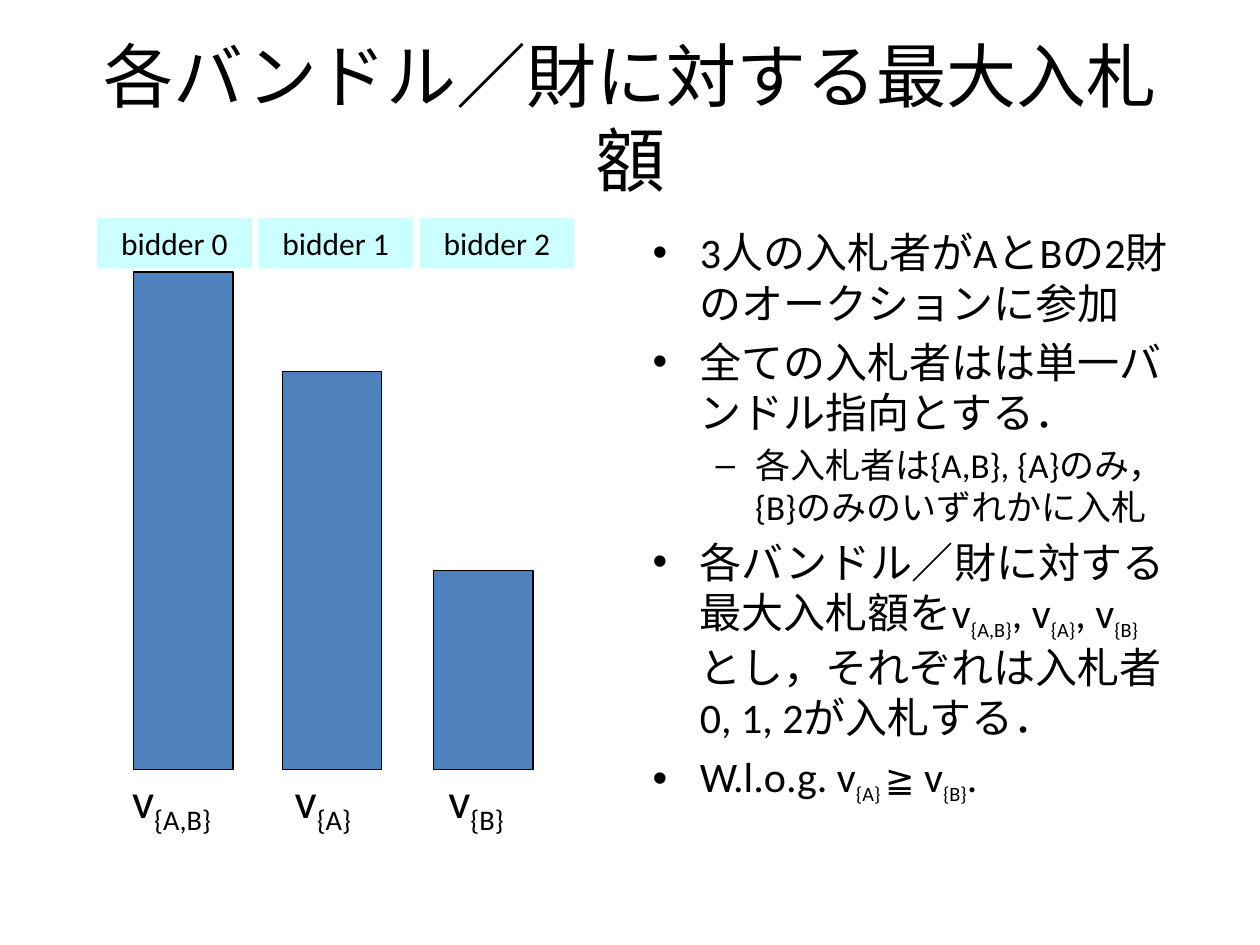
import pptx
from pptx.dml.color import RGBColor
from pptx.enum.shapes import MSO_SHAPE
from pptx.enum.text import MSO_ANCHOR, MSO_AUTO_SIZE, PP_ALIGN
from pptx.util import Inches, Pt

TITLE = "各バンドル／財に対する最大入札額"

# Each bullet: level, then spans of (text, size, is subscript)
BULLETS = [
    (0, [("3人の入札者がAとBの2財のオークションに参加", 24, False)]),
    (0, [("全ての入札者はは単一バンドル指向とする．", 24, False)]),
    (1, [("各入札者は{A,B}, {A}のみ，{B}のみのいずれかに入札", 20, False)]),
    (0, [("各バンドル／財に対する最大入札額をv", 24, False), ("{A,B}", 20, True),
         (", v", 24, False), ("{A}", 20, True),
         (", v", 24, False), ("{B}", 20, True),
         (" とし，それぞれは入札者0, 1, 2が入札する．", 24, False)]),
    (0, [("W.l.o.g. v", 24, False), ("{A} ", 20, True), ("≧", 20, False),
         (" v", 24, False), ("{B}", 20, True), (".", 24, False)]),
]

# Bidder, bundle, bid in units, bar left, label left, label width
BIDS = [
    ("bidder 0", "{A,B}", 5, 1.06, 0.95, 1.0),
    ("bidder 1", "{A}", 4, 2.24, 2.24, 0.75),
    ("bidder 2", "{B}", 2, 3.44, 3.46, 0.75),
]
BAR_WIDTH, BAR_BOTTOM, UNIT = 0.79, 6.11, 0.79
TAG_LEFT, TAG_TOP, TAG_WIDTH, TAG_HEIGHT, TAG_STEP = 0.77, 1.73, 1.23, 0.4, 1.28
LABEL_TOP, LABEL_HEIGHT = 6.06, 0.57


def color(value):
    return RGBColor.from_string(value)


def format_span(span, size):
    span.font.name = "Calibri"
    span.font.size = Pt(size)
    span.font.color.rgb = color("000000")


def add_spans(para, spans):
    for text, size, subscript in spans:
        span = para.add_run()
        span.text = text
        format_span(span, size)
        if subscript:
            span.font._element.set("baseline", "-25000")


def place(shape, left, top, width, height):
    shape.left, shape.top = Inches(left), Inches(top)
    shape.width, shape.height = Inches(width), Inches(height)


def add_rectangle(slide, left, top, width, height, fill):
    box = slide.shapes.add_shape(MSO_SHAPE.RECTANGLE, Inches(left), Inches(top),
                                 Inches(width), Inches(height))
    box.shadow.inherit = False
    box.fill.solid()
    box.fill.fore_color.rgb = color(fill)
    return box


def add_bid(slide, index, bidder, bundle, units, bar_left, label_left, label_width):
    """Draw one bidder's bar with its name above and its value below."""
    height = units * UNIT
    bar = add_rectangle(slide, bar_left, BAR_BOTTOM - height, BAR_WIDTH, height, "4F81BD")
    bar.line.color.rgb = color("000000")
    bar.line.width = Pt(0.75)

    tag = add_rectangle(slide, TAG_LEFT + index * TAG_STEP, TAG_TOP,
                        TAG_WIDTH, TAG_HEIGHT, "CCFFFF")
    tag.line.fill.background()
    tag.text_frame.text = bidder
    tag.text_frame.vertical_anchor = MSO_ANCHOR.MIDDLE
    para = tag.text_frame.paragraphs[0]
    para.alignment = PP_ALIGN.CENTER
    format_span(para.runs[0], 18)

    label = slide.shapes.add_textbox(Inches(label_left), Inches(LABEL_TOP),
                                     Inches(label_width), Inches(LABEL_HEIGHT))
    label.text_frame.word_wrap = False
    add_spans(label.text_frame.paragraphs[0], [("v", 28, False), (bundle, 28, True)])


def main():
    deck = pptx.Presentation()
    deck.slide_width, deck.slide_height = Inches(10), Inches(7.5)
    slide = deck.slides.add_slide(deck.slide_layouts[1])

    title, body = slide.shapes.title, slide.placeholders[1]
    place(title, 0.5, 0.3, 9, 1.25)
    title.text_frame.text = TITLE
    title.text_frame.auto_size = MSO_AUTO_SIZE.NONE
    format_span(title.text_frame.paragraphs[0].runs[0], 40)

    place(body, 5.08, 1.75, 4.42, 4.95)
    frame = body.text_frame
    frame.auto_size = MSO_AUTO_SIZE.NONE
    for index, (level, spans) in enumerate(BULLETS):
        para = frame.add_paragraph() if index else frame.paragraphs[0]
        para.level = level
        add_spans(para, spans)

    for index, bid in enumerate(BIDS):
        add_bid(slide, index, *bid)

    deck.save("out.pptx")


if __name__ == "__main__":
    main()
